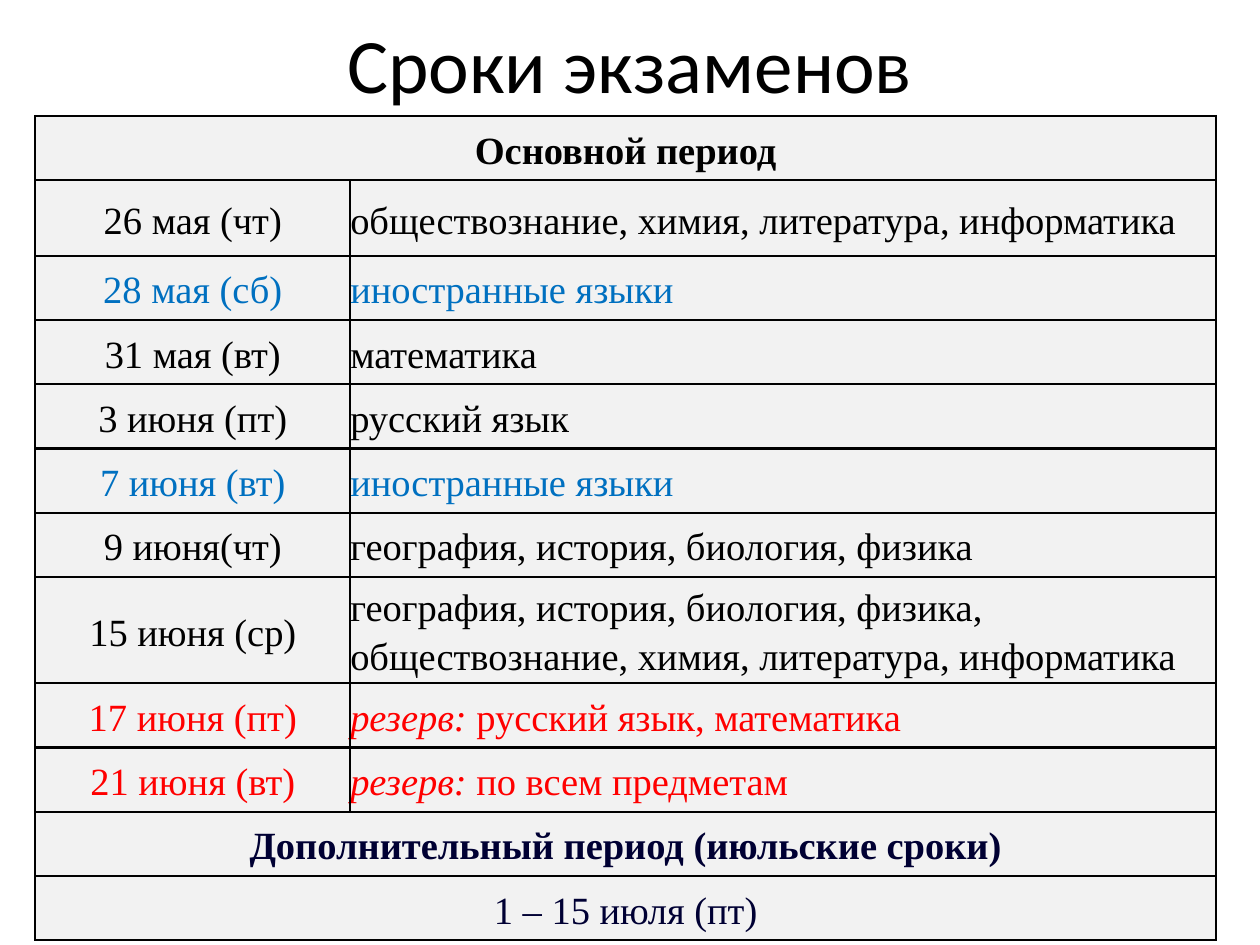
"""Build the exam timetable slide."""
from lxml import etree
from pptx import Presentation, util as u
from pptx.dml.color import RGBColor
from pptx.enum import text as t
from pptx.oxml.ns import qn

BLACK, BLUE, RED, NAVY, GREY = "000000", "0070C0", "FF0000", "000033", "F2F2F2"
TITLE = "Сроки экзаменов"
ROWS = [
    (BLACK, "Основной период"),
    (BLACK, "26 мая (чт)", "обществознание, химия, литература, информатика"),
    (BLUE, "28 мая (сб)", "иностранные языки"),
    (BLACK, "31 мая (вт)", "математика"),
    (BLACK, "3 июня (пт)", "русский язык"),
    (BLUE, "7 июня (вт)", "иностранные языки"),
    (BLACK, "9 июня(чт)", "география, история, биология, физика"),
    (BLACK, "15 июня (ср)", "география, история, биология, физика, "
     "обществознание, химия, литература, информатика"),
    (RED, "17 июня (пт)", "резерв:", " русский язык, математика"),
    (RED, "21 июня (вт)", "резерв: ", "по всем предметам"),
    (NAVY, "Дополнительный период (июльские сроки)"),
    (NAVY, "1 – 15 июля (пт)"),
]
HEADS = (0, 10)
COLS = (2.5, 6.87)
HIGH, TALL = 0.51, 0.6
LEFT, TOP = 0.28, 0.92


def tint(code):
    """Turn a hex string into a colour."""
    return RGBColor.from_string(code)


def write(frame, *runs, size=22, font="Times New Roman", color=BLACK,
          bold=False, mid=True, gap=1.15):
    """Write runs as one paragraph, the first of several in italics."""
    para = frame.paragraphs[0]
    para.alignment = t.PP_ALIGN.CENTER if mid else t.PP_ALIGN.LEFT
    para.line_spacing = gap
    for i, word in enumerate(runs):
        run = para.add_run()
        run.text = word
        face = run.font
        face.size, face.name, face.bold = u.Pt(size), font, bold
        face.italic = len(runs) > 1 and i == 0
        face.color.rgb = tint(color)


def dress(cell):
    """Give a cell its borders, fill, margins and anchor."""
    props = cell._tc.get_or_add_tcPr()
    for side in "LRTB":
        line = etree.SubElement(props, qn(f"a:ln{side}"), w=str(u.Pt(1.5)))
        fill = etree.SubElement(line, qn("a:solidFill"))
        etree.SubElement(fill, qn("a:srgbClr"), val=BLACK)
    cell.fill.solid()
    cell.fill.fore_color.rgb = tint(GREY)
    cell.margin_left = cell.margin_right = 0
    cell.margin_top = cell.margin_bottom = 0
    cell.vertical_anchor = t.MSO_ANCHOR.MIDDLE


def main():
    """Lay out the title and the table."""
    deck = Presentation()
    deck.slide_width, deck.slide_height = u.Inches(10), u.Inches(7.5)
    slide = deck.slides.add_slide(deck.slide_layouts[6])

    box = slide.shapes.add_textbox(u.Inches(0.5), 0, u.Inches(9), u.Inches(0.99))
    frame = box.text_frame
    frame.word_wrap = True
    frame.vertical_anchor = t.MSO_ANCHOR.MIDDLE
    write(frame, TITLE, size=44, font="Calibri", gap=1.0)

    highs = [TALL if i == 1 else HIGH for i in range(len(ROWS))]
    spots = (LEFT, TOP, sum(COLS), sum(highs))
    grid = slide.shapes.add_table(len(ROWS), len(COLS), *map(u.Inches, spots)).table
    for col, wide in zip(grid.columns, COLS):
        col.width = u.Inches(wide)
    for i, (color, day, *exams) in enumerate(ROWS):
        grid.rows[i].height = u.Inches(highs[i])
        first, last = grid.cell(i, 0), grid.cell(i, 1)
        dress(first)
        dress(last)
        write(first.text_frame, day, color=color, bold=i in HEADS)
        if exams:
            write(last.text_frame, *exams, color=color, mid=False)
        else:
            first.merge(last)
    deck.save("out.pptx")


if __name__ == "__main__":
    main()
